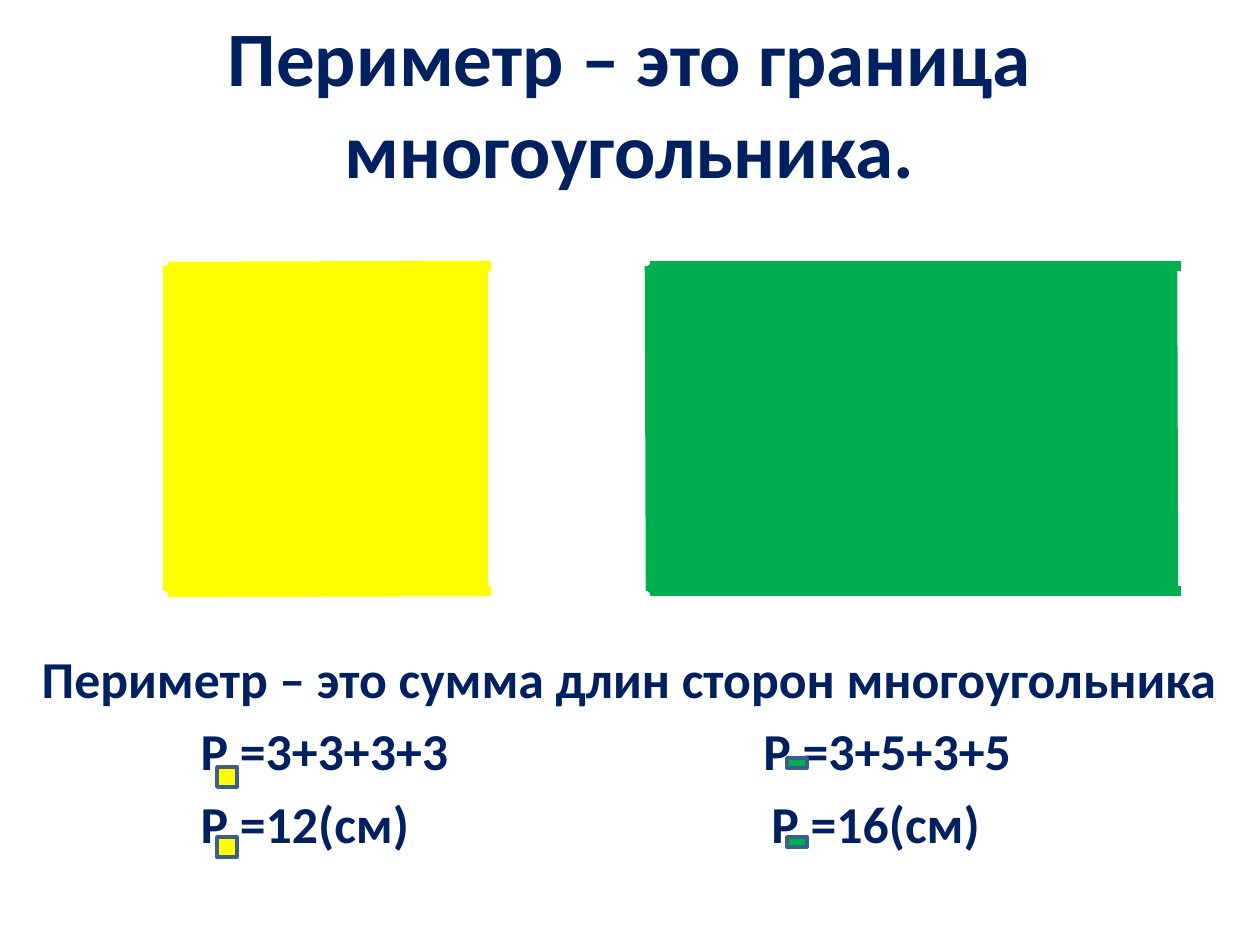
from dataclasses import dataclass

import pptx
import pptx.dml.color
import pptx.enum.shapes
import pptx.enum.text
import pptx.oxml
import pptx.oxml.ns
import pptx.util

EMU_PER_PX = 914400 / 126
NAVY, YELLOW, GREEN, BORDER = "002060", "FFFF00", "00B050", "3A5F8C"
CAPTION = "Периметр – это сумма длин сторон многоугольника"
BODY_SIZE = 29.6


@dataclass
class Box:
    left: int
    top: int
    width: int
    height: int
    color: str
    border: str


@dataclass
class Side:
    start: tuple[int, int]
    end: tuple[int, int]
    color: str


@dataclass
class Formula:
    text: str
    indent: int


SIDES = [
    Side((168, 266), (168, 591), YELLOW),
    Side((483, 266), (483, 591), YELLOW),
    Side((491, 266), (168, 267), YELLOW),
    Side((491, 591), (168, 592), YELLOW),
    Side((650, 266), (651, 591), GREEN),
    Side((1172, 266), (1173, 591), GREEN),
    Side((1181, 591), (650, 591), GREEN),
    Side((1181, 266), (650, 266), GREEN),
]
BOXES = [
    Box(168, 266, 315, 325, YELLOW, YELLOW),
    Box(650, 266, 522, 325, GREEN, GREEN),
    Box(217, 767, 20, 20, YELLOW, BORDER),
    Box(217, 837, 20, 20, YELLOW, BORDER),
    Box(787, 758, 20, 10, GREEN, BORDER),
    Box(787, 837, 20, 10, GREEN, BORDER),
]
SQUARE_FORMULAS = [Formula("Р =3+3+3+3", 188), Formula("Р =12(см)", 188)]
RECTANGLE_FORMULAS = [Formula("Р =3+5+3+5", 0), Formula("Р =16(см)", 8)]


def px(length: int) -> pptx.util.Emu:
    return pptx.util.Emu(round(length * EMU_PER_PX))


def rgb(color: str) -> pptx.dml.color.RGBColor:
    return pptx.dml.color.RGBColor.from_string(color)


def place(shape, left: int, top: int, width: int, height: int) -> None:
    shape.left, shape.top = px(left), px(top)
    shape.width, shape.height = px(width), px(height)
    shape.text_frame.word_wrap = True
    shape.text_frame.auto_size = pptx.enum.text.MSO_AUTO_SIZE.NONE


def format_paragraph(paragraph, size: float, centered: bool) -> None:
    alignment = pptx.enum.text.PP_ALIGN
    paragraph.alignment = alignment.CENTER if centered else alignment.LEFT
    for run in paragraph.runs:
        run.font.name = "Calibri"
        run.font.size = pptx.util.Pt(size)
        run.font.bold = True
        run.font.color.rgb = rgb(NAVY)


def write_formula(paragraph, formula: Formula, space_before: int) -> None:
    paragraph.text = formula.text
    format_paragraph(paragraph, BODY_SIZE, False)
    paragraph.space_before = pptx.util.Pt(space_before)
    properties = paragraph._p.get_or_add_pPr()
    properties.set("marL", str(int(px(formula.indent))))
    properties.set("indent", "0")


def fill_title(title) -> None:
    place(title, 0, 0, 1260, 203)
    title.text_frame.text = "Периметр – это граница многоугольника."
    title.text_frame.vertical_anchor = pptx.enum.text.MSO_ANCHOR.MIDDLE
    format_paragraph(title.text_frame.paragraphs[0], 44, True)


def fill_body(body) -> None:
    """Write the caption and, below it, the formulas of the square."""
    place(body, 0, 640, 1260, 276)
    frame = body.text_frame
    frame.text = CAPTION
    format_paragraph(frame.paragraphs[0], BODY_SIZE, True)
    frame.paragraphs[0].space_before = pptx.util.Pt(0)
    for formula in SQUARE_FORMULAS:
        write_formula(frame.add_paragraph(), formula, 6)


def add_rectangle_formulas(slide) -> None:
    text_box = slide.shapes.add_textbox(0, 0, 0, 0)
    place(text_box, 751, 713, 400, 150)
    frame = text_box.text_frame
    first, second = RECTANGLE_FORMULAS
    write_formula(frame.paragraphs[0], first, 0)
    write_formula(frame.add_paragraph(), second, 6)


def draw_side(slide, side: Side) -> None:
    connector = slide.shapes.add_connector(
        pptx.enum.shapes.MSO_CONNECTOR.STRAIGHT,
        *map(px, side.start + side.end))
    connector.line.color.rgb = rgb(side.color)
    connector.line.width = pptx.util.Pt(6)
    connector._element.spPr.append(
        pptx.oxml.parse_xml(f"<a:effectLst {pptx.oxml.ns.nsdecls('a')}/>"))


def draw_box(slide, box: Box) -> None:
    shape = slide.shapes.add_shape(
        pptx.enum.shapes.MSO_SHAPE.RECTANGLE,
        px(box.left), px(box.top), px(box.width), px(box.height))
    shape.shadow.inherit = False
    shape.fill.solid()
    shape.fill.fore_color.rgb = rgb(box.color)
    shape.line.color.rgb = rgb(box.border)
    shape.line.width = pptx.util.Pt(2)


def main() -> None:
    presentation = pptx.Presentation()
    presentation.slide_width, presentation.slide_height = px(1260), px(945)
    slide = presentation.slides.add_slide(presentation.slide_layouts[0])
    fill_title(slide.shapes.title)
    fill_body(slide.placeholders[1])
    add_rectangle_formulas(slide)
    for side in SIDES:
        draw_side(slide, side)
    for box in BOXES:
        draw_box(slide, box)
    presentation.save("out.pptx")


if __name__ == "__main__":
    main()
